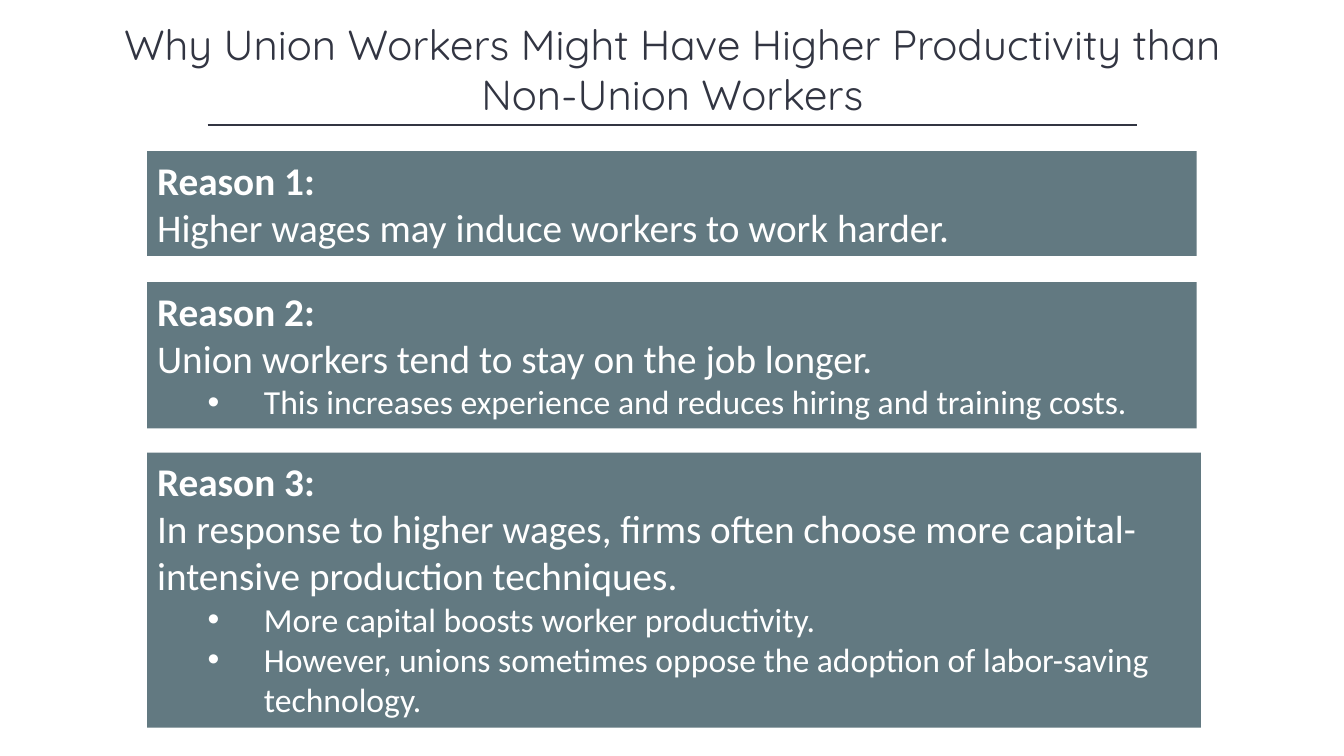
import pptx
import pptx.dml.color
import pptx.enum.shapes
import pptx.enum.text
import pptx.oxml.ns
import pptx.util
from lxml import etree

Inches = pptx.util.Inches
Pt = pptx.util.Pt
RGBColor = pptx.dml.color.RGBColor
qn = pptx.oxml.ns.qn

INK = RGBColor(0x32, 0x35, 0x42)
SLATE = RGBColor(0x62, 0x79, 0x81)
WHITE = RGBColor(0xFF, 0xFF, 0xFF)

HEADING = "Why Union Workers Might Have Higher Productivity than Non-Union Workers"
REASONS = [
    ((1.46, 1.5, 10.41, 1.04), "Higher wages may induce workers to work harder.", []),
    ((1.46, 2.8, 10.41, 1.45), "Union workers tend to stay on the job longer.",
     ["This increases experience and reduces hiring and training costs."]),
    ((1.46, 4.49, 10.45, 2.73),
     "In response to higher wages, firms often choose more capital-intensive production techniques.",
     ["More capital boosts worker productivity.",
      "However, unions sometimes oppose the adoption of labor-saving technology."]),
]


def style_font(paragraph, face, size, color, bold=False):
    """Set the font of a whole paragraph."""
    font = paragraph.font
    font.name, font.size, font.bold = face, Pt(size), bold
    font.color.rgb = color


def add_bullet(paragraph):
    """Give a paragraph a hanging round bullet."""
    paragraph.level = 1
    properties = paragraph._p.get_or_add_pPr()
    properties.set("marL", str(Inches(1.06)))
    properties.set("indent", str(Inches(-0.56)))
    etree.SubElement(properties, qn("a:buFont")).set("typeface", "Arial")
    etree.SubElement(properties, qn("a:buChar")).set("char", "•")


def build_heading(slide, box):
    """Place the title in its box with a centred rule along the lower edge."""
    left, top, width, height = box
    title = slide.shapes.title
    title.left, title.top, title.width, title.height = map(Inches, box)
    frame = title.text_frame
    frame.text = HEADING
    frame.word_wrap = True
    frame.auto_size = pptx.enum.text.MSO_AUTO_SIZE.SHAPE_TO_FIT_TEXT
    frame.vertical_anchor = pptx.enum.text.MSO_ANCHOR.MIDDLE
    frame.paragraphs[0].alignment = pptx.enum.text.PP_ALIGN.CENTER
    style_font(frame.paragraphs[0], "Quicksand", 30, INK)

    inset, bottom = 1.26, Inches(top + height)
    rule = slide.shapes.add_connector(
        pptx.enum.shapes.MSO_CONNECTOR.STRAIGHT,
        Inches(left + inset), bottom, Inches(left + width - inset), bottom)
    rule.line.color.rgb = INK
    rule.line.width = Pt(1)
    etree.SubElement(rule._element.spPr, qn("a:effectLst"))


def build_reason(slide, box, number, statement, details):
    """Fill a panel with a numbered reason and its bulleted details."""
    panel = slide.shapes.add_shape(
        pptx.enum.shapes.MSO_SHAPE.RECTANGLE, *map(Inches, box))
    panel.shadow.inherit = False
    panel.fill.solid()
    panel.fill.fore_color.rgb = SLATE
    panel.line.fill.background()
    frame = panel.text_frame
    frame.word_wrap = True
    frame.auto_size = pptx.enum.text.MSO_AUTO_SIZE.SHAPE_TO_FIT_TEXT
    frame.vertical_anchor = pptx.enum.text.MSO_ANCHOR.TOP
    frame.text = "\n".join([f"Reason {number}:", statement, *details])
    for position, paragraph in enumerate(frame.paragraphs):
        paragraph.alignment = pptx.enum.text.PP_ALIGN.LEFT
        is_detail = position > 1
        if is_detail:
            add_bullet(paragraph)
        style_font(paragraph, "Calibri", 24 if is_detail else 28, WHITE, position == 0)


def main():
    """Build the slide and save it."""
    deck = pptx.Presentation()
    deck.slide_width, deck.slide_height = Inches(13.33), Inches(7.5)
    slide = deck.slides.add_slide(deck.slide_layouts[5])
    build_heading(slide, (0.8, 0.13, 11.74, 1.11))
    for number, (box, statement, details) in enumerate(REASONS, 1):
        build_reason(slide, box, number, statement, details)
    deck.save("out.pptx")


if __name__ == "__main__":
    main()
